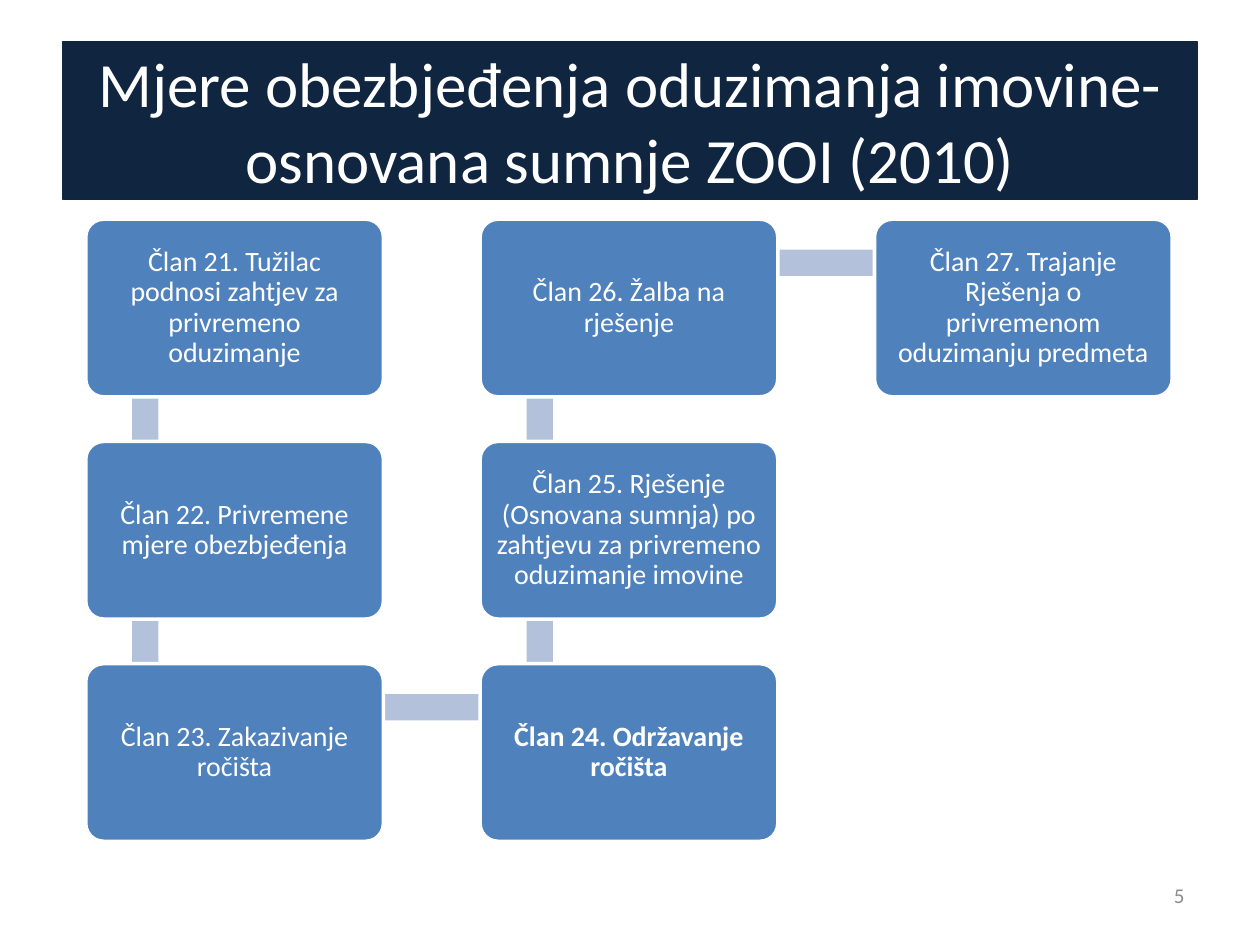
"""Build a slide showing the procedure for securing confiscation of property."""
from dataclasses import dataclass
from itertools import pairwise

from pptx import Presentation
from pptx import util as u
from pptx.dml.color import RGBColor
from pptx.enum import shapes, text


@dataclass(frozen=True)
class Theme:
    font: str = "Calibri"
    navy: str = "10253F"
    blue: str = "4F81BD"
    pale: str = "B3C1DB"
    white: str = "FFFFFF"
    grey: str = "8C8C8C"
    title: int = 36
    body: int = 16
    small: int = 12


THEME = Theme()
ROWS = 3
LEFT, TOP = 1.73, 4.42
BOX_W, BOX_H = 6, 3.58
STEP_X, STEP_Y = 7.95, 4.48
BAR_X, BAR_Y, BAR_THICK = 1.2, 0.88, 0.53
STEPS = [
    ("Član 21. Tužilac podnosi zahtjev za privremeno oduzimanje", False),
    ("Član 22. Privremene mjere obezbjeđenja", False),
    ("Član 23. Zakazivanje ročišta", False),
    ("Član 24. Održavanje ročišta", True),
    ("Član 25. Rješenje (Osnovana sumnja) po zahtjevu za privremeno oduzimanje imovine", False),
    ("Član 26. Žalba na rješenje", False),
    ("Član 27. Trajanje Rješenja o privremenom oduzimanju predmeta", False),
]


def set_all(obj, values):
    """Set every attribute named in a dict."""
    for name, value in values.items():
        setattr(obj, name, value)


def place(sp, x, y, w, h):
    """Position a shape in centimetres."""
    set_all(sp, {"left": u.Cm(x), "top": u.Cm(y), "width": u.Cm(w), "height": u.Cm(h)})


def paint(sp, fill, line=None, width=0):
    """Give a shape a solid fill and an optional outline."""
    sp.fill.solid()
    sp.fill.fore_color.rgb = RGBColor.from_string(fill)
    if line:
        sp.line.color.rgb = RGBColor.from_string(line)
        sp.line.width = u.Pt(width)
    else:
        sp.line.fill.background()


def write(sp, words, size, color, align=text.PP_ALIGN.CENTER, bold=False, spacing=1.0):
    """Write one formatted paragraph, centred vertically."""
    tf = sp.text_frame
    set_all(tf, {"word_wrap": True, "auto_size": text.MSO_AUTO_SIZE.NONE,
                 "vertical_anchor": text.MSO_ANCHOR.MIDDLE})
    p = tf.paragraphs[0]
    set_all(p, {"alignment": align, "line_spacing": spacing})
    r = p.add_run()
    r.text = words
    set_all(r.font, {"name": THEME.font, "size": u.Pt(size), "bold": bold})
    r.font.color.rgb = RGBColor.from_string(color)


def add_title(s, words):
    """Format the title placeholder as a dark banner."""
    sp = s.shapes.title
    place(sp, 1.27, 0.84, 22.86, 3.18)
    paint(sp, THEME.navy, THEME.navy, 0.75)
    write(sp, words, THEME.title, THEME.white)


def grid_position(index):
    """Return a step's corner, going down and up the columns in turn."""
    col, row = divmod(index, ROWS)
    if col % 2:
        row = ROWS - 1 - row
    return LEFT + col * STEP_X, TOP + row * STEP_Y


def add_bar(s, start, end):
    """Link two steps with a straight pale bar."""
    (x1, y1), (x2, y2) = start, end
    x, y = min(x1, x2) + BAR_X, min(y1, y2) + BAR_Y
    w, h = abs(x2 - x1), abs(y2 - y1)
    if w > h:
        box = (x, y - BAR_THICK / 2, w, BAR_THICK)
    else:
        box = (x - BAR_THICK / 2, y, BAR_THICK, h)
    sp = s.shapes.add_shape(shapes.MSO_SHAPE.RECTANGLE, *map(u.Cm, box))
    sp.shadow.inherit = False
    paint(sp, THEME.pale)


def add_step(s, corner, words, bold):
    """Add one rounded step box."""
    box = (*corner, BOX_W, BOX_H)
    sp = s.shapes.add_shape(shapes.MSO_SHAPE.ROUNDED_RECTANGLE, *map(u.Cm, box))
    sp.shadow.inherit = False
    sp.adjustments[0] = 0.1
    paint(sp, THEME.blue, THEME.white, 2)
    sides = ("left", "right", "top", "bottom")
    set_all(sp.text_frame, {f"margin_{side}": u.Cm(0.18) for side in sides})
    write(sp, words, THEME.body, THEME.white, bold=bold, spacing=0.9)


def add_page_number(s, number):
    """Add the page number at the lower right."""
    sp = s.shapes.add_textbox(*map(u.Cm, (18.2, 17.53, 5.93, 1.02)))
    write(sp, number, THEME.small, THEME.grey, text.PP_ALIGN.RIGHT)


def main():
    """Build and save the slide."""
    prs = Presentation()
    set_all(prs, {"slide_width": u.Cm(25.4), "slide_height": u.Cm(19.05)})
    s = prs.slides.add_slide(prs.slide_layouts[5])
    add_title(s, "Mjere obezbjeđenja oduzimanja imovine- osnovana sumnje ZOOI (2010)")
    corners = [grid_position(i) for i in range(len(STEPS))]
    for start, end in pairwise(corners):
        add_bar(s, start, end)
    for corner, (words, bold) in zip(corners, STEPS):
        add_step(s, corner, words, bold)
    add_page_number(s, "5")
    prs.save("out.pptx")


if __name__ == "__main__":
    main()
